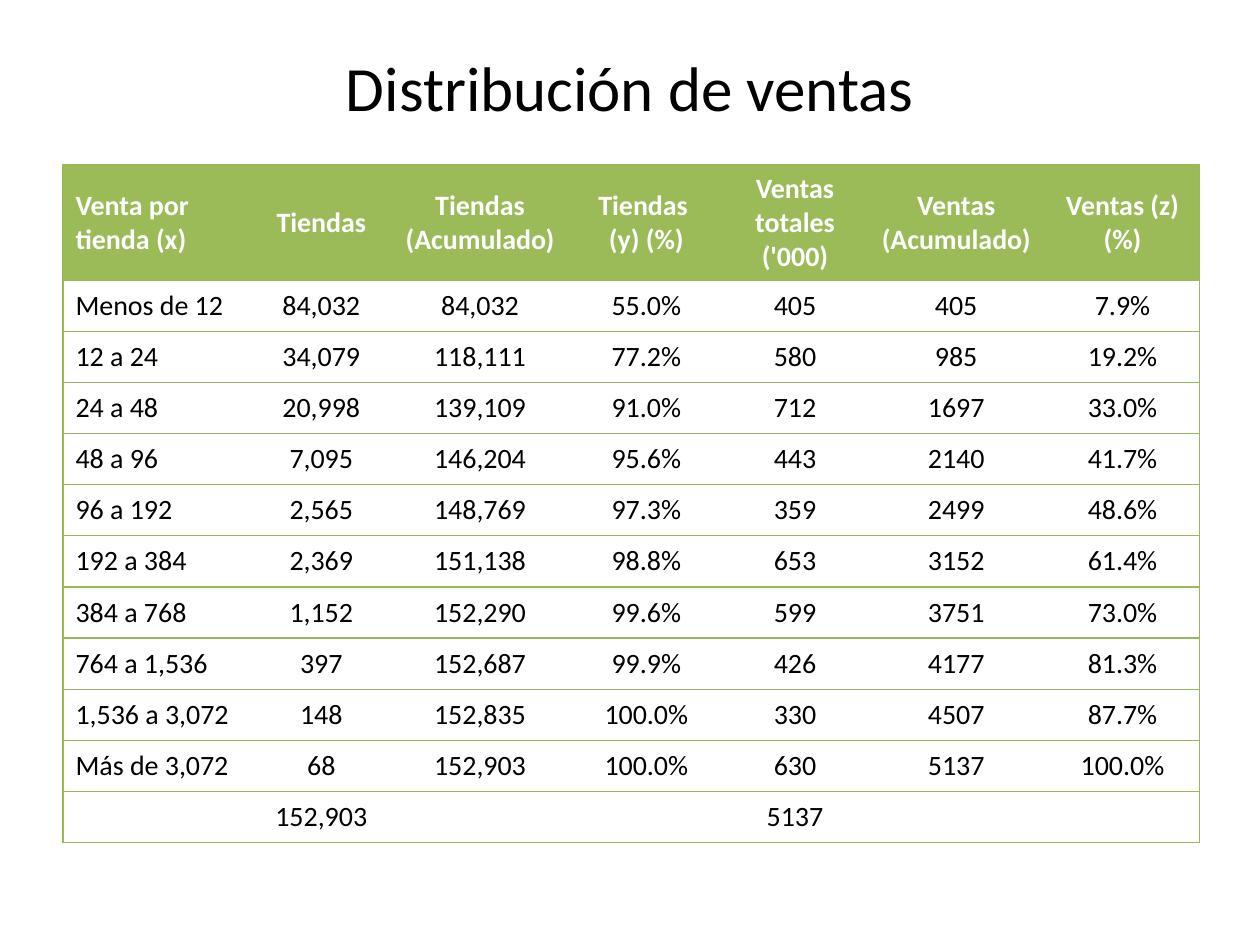
from itertools import accumulate

from lxml.etree import SubElement
from pptx import Presentation
from pptx.dml.color import RGBColor
from pptx.enum.text import MSO_ANCHOR as Anchor, PP_ALIGN as Align
from pptx.oxml.ns import qn
from pptx.util import Inches, Pt

FONT = "Calibri"
BLACK = RGBColor(0x00, 0x00, 0x00)
WHITE = RGBColor(0xFF, 0xFF, 0xFF)
HEADER_GREEN = RGBColor(0x9B, 0xBB, 0x59)
BORDER_GREEN = RGBColor(0x98, 0xB9, 0x55)

HEADINGS = ["Venta por tienda (x)", "Tiendas", "Tiendas (Acumulado)",
            "Tiendas \v(y) (%)", "Ventas totales ('000)",
            "Ventas (Acumulado)", "Ventas (z) (%)"]
COLUMN_WIDTHS = [1.5, 1.1, 1.42, 1.22, 1.14, 1.42, 1.22]

# Sales range per store, number of stores, total sales in thousands
SALES_RANGES = [
    ("Menos de 12", 84032, 405),
    ("12 a 24", 34079, 580),
    ("24 a 48", 20998, 712),
    ("48 a 96", 7095, 443),
    ("96 a 192", 2565, 359),
    ("192 a 384", 2369, 653),
    ("384 a 768", 1152, 599),
    ("764 a 1,536", 397, 426),
    ("1,536 a 3,072", 148, 330),
    ("Más de 3,072", 68, 630),
]


def distribution_rows():
    """Headings, one row per range with running totals, and the totals."""
    ranges, stores, sales = zip(*SALES_RANGES)
    all_stores, all_sales = sum(stores), sum(sales)
    rows = [HEADINGS]
    for label, store, stores_so_far, sale, sales_so_far in zip(
            ranges, stores, accumulate(stores), sales, accumulate(sales)):
        rows.append([label, f"{store:,}", f"{stores_so_far:,}",
                     f"{stores_so_far / all_stores:.1%}", str(sale),
                     str(sales_so_far), f"{sales_so_far / all_sales:.1%}"])
    rows.append(["", f"{all_stores:,}", "", "", str(all_sales), "", ""])
    return rows


def format_text(paragraph, size, color, align, bold=False):
    paragraph.alignment = align
    for run in paragraph.runs:
        run.font.name = FONT
        run.font.size = Pt(size)
        run.font.bold = bold
        run.font.color.rgb = color


def set_borders(cell, visible_sides):
    properties = cell._tc.get_or_add_tcPr()
    for side in "LRTB":
        border = SubElement(properties, qn(f"a:ln{side}"), w=str(Pt(0.75)))
        if side in visible_sides:
            fill = SubElement(border, qn("a:solidFill"))
            SubElement(fill, qn("a:srgbClr"), val=str(BORDER_GREEN))
        else:
            SubElement(border, qn("a:noFill"))


def add_title(slide, left, top, width, height):
    title = slide.shapes.title
    title.left, title.top, title.width, title.height = left, top, width, height
    title.text_frame.text = "Distribución de ventas"
    title.text_frame.vertical_anchor = Anchor.MIDDLE
    format_text(title.text_frame.paragraphs[0], 36, BLACK, Align.CENTER)


def add_distribution_table(slide, left, top, width, height):
    rows = distribution_rows()
    last_column = len(HEADINGS) - 1
    table = slide.shapes.add_table(
        len(rows), len(HEADINGS), left, top, width, height).table
    table.horz_banding = False
    for column, column_width in zip(table.columns, COLUMN_WIDTHS):
        column.width = Inches(column_width)

    for r, row in enumerate(rows):
        is_header = r == 0
        for c, text in enumerate(row):
            cell = table.cell(r, c)
            cell.text_frame.text = text
            cell.vertical_anchor = Anchor.MIDDLE
            format_text(cell.text_frame.paragraphs[0], 16,
                        WHITE if is_header else BLACK,
                        Align.LEFT if c == 0 else Align.CENTER, is_header)
            # Rules between rows, and an outline around the table
            set_borders(cell, "TB" + "L" * (c == 0) + "R" * (c == last_column))
            if is_header:
                cell.fill.solid()
                cell.fill.fore_color.rgb = HEADER_GREEN
            else:
                cell.fill.background()


def main():
    presentation = Presentation()
    presentation.slide_width = Inches(10)
    presentation.slide_height = Inches(7.5)
    title_only = presentation.slide_layouts[5]
    slide = presentation.slides.add_slide(title_only)
    add_title(slide, Inches(0.5), Inches(0.3), Inches(9), Inches(0.77))
    # Equal rows; the header row grows to hold its three lines
    add_distribution_table(slide, Inches(0.5), Inches(1.31),
                           Inches(9.02), Inches(4.87))
    presentation.save("out.pptx")


if __name__ == "__main__":
    main()
